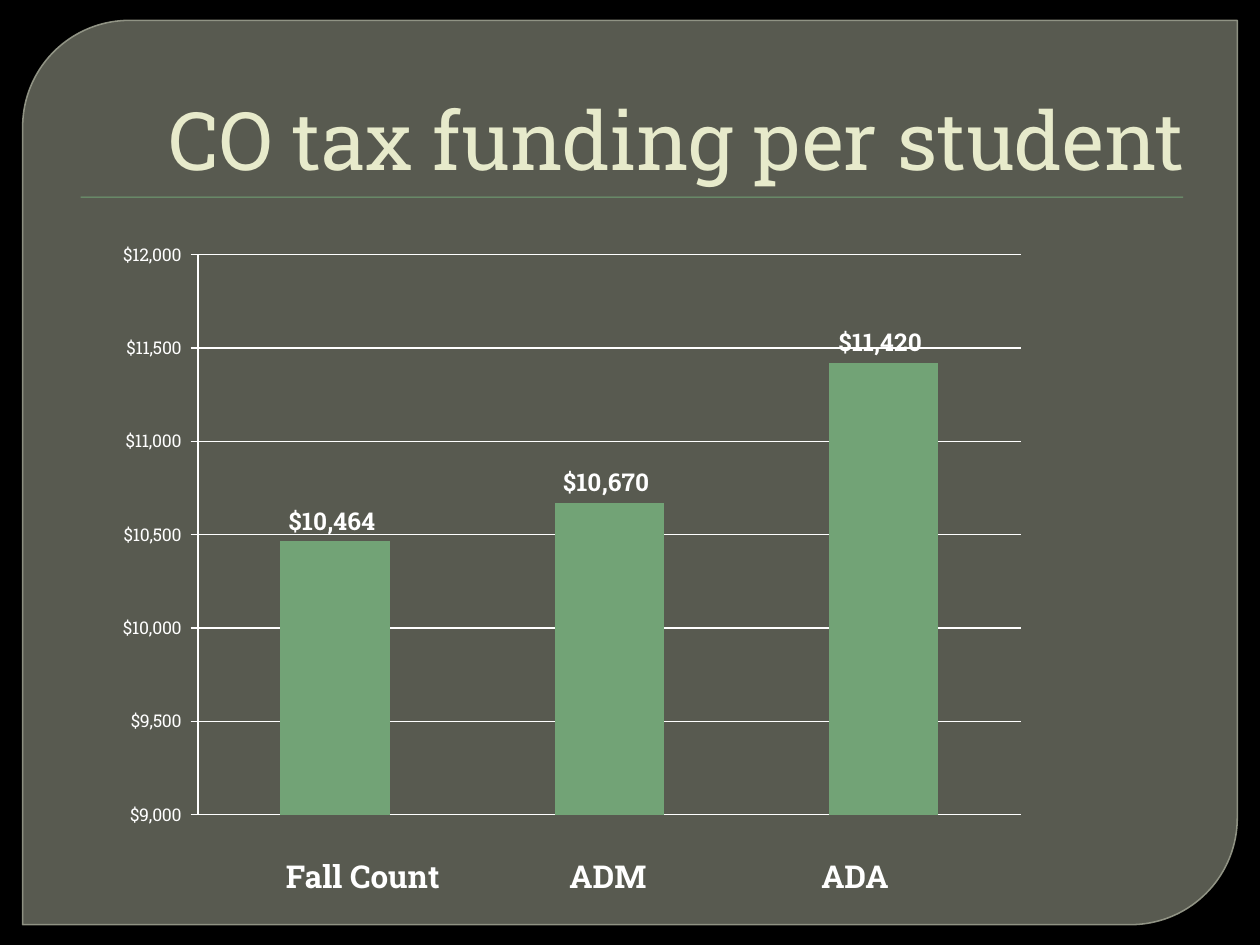
import collections

import pptx
import pptx.chart.data
import pptx.dml.color
import pptx.enum.chart
import pptx.enum.shapes
import pptx.enum.text
import pptx.oxml
import pptx.oxml.ns
import pptx.util

RGBColor = pptx.dml.color.RGBColor
BLACK = RGBColor(0x00, 0x00, 0x00)
WHITE = RGBColor(0xFF, 0xFF, 0xFF)
OLIVE = RGBColor(0x88, 0x8B, 0x7B)
EDGE = RGBColor(0x9D, 0xA0, 0x90)
GREEN = RGBColor(0x72, 0xA3, 0x76)
CREAM = RGBColor(0xE7, 0xEA, 0xCB)
FONT = "Roboto Slab"
DOLLARS = '"$"#,##0_);\\("$"#,##0\\)'
FUNDING = {"1": 10464, "2": 10670, "3": 11420}
Box = collections.namedtuple("Box", "left top width height")


def share(box, left, top, width, height):
    """Return the part of a box given by shares of its size."""
    return Box(
        round(box.left + left * box.width),
        round(box.top + top * box.height),
        round(width * box.width),
        round(height * box.height),
    )


def style_font(font, size, color, bold=False):
    """Set the typeface, size, colour and weight of a font."""
    font.name = FONT
    font.size = pptx.util.Pt(size)
    font.color.rgb = color
    font.bold = bold


def set_opacity(color_format, percent):
    """Make a solid fill partly see-through."""
    solid = color_format._xPr.find(pptx.oxml.ns.qn("a:solidFill"))
    solid[0].append(pptx.oxml.parse_xml(
        f'<a:alpha {pptx.oxml.ns.nsdecls("a")} val="{percent * 1000}"/>'))


def add_panel(slide, box):
    """Draw the panel with two rounded corners and the rule below the title."""
    shapes = pptx.enum.shapes.MSO_SHAPE
    panel = slide.shapes.add_shape(
        shapes.ROUND_2_DIAG_RECTANGLE, *share(box, 0.018, 0.0215, 0.964, 0.957))
    panel.adjustments[0] = 0.118
    panel.adjustments[1] = 0
    panel.shadow.inherit = False
    panel.fill.solid()
    panel.fill.fore_color.rgb = OLIVE
    set_opacity(panel.fill, 65)
    panel.line.width = pptx.util.Pt(0.87)
    panel.line.color.rgb = EDGE
    set_opacity(panel.line.fill, 88)

    rule = slide.shapes.add_shape(
        shapes.RECTANGLE, *share(box, 0.064, 0.208, 0.875, 0.0013))
    rule.shadow.inherit = False
    rule.fill.solid()
    rule.fill.fore_color.rgb = GREEN
    rule.line.fill.background()


def add_text(slide, box, text, size, color, bold=False):
    """Place one line of text and return its frame."""
    frame = slide.shapes.add_textbox(*box).text_frame
    frame.word_wrap = True
    frame.text = text
    style_font(frame.paragraphs[0].runs[0].font, size, color, bold)
    return frame


def add_title(slide, box):
    """Place the title at the lower right of its box."""
    title = add_text(slide, box, "CO tax funding per student", 46, CREAM)
    title.vertical_anchor = pptx.enum.text.MSO_ANCHOR.BOTTOM
    title.paragraphs[0].alignment = pptx.enum.text.PP_ALIGN.RIGHT


def fix_plot_area(chart, **shares):
    """Pin the inner plot area to shares of the chart's size."""
    plot_area = chart._chartSpace.chart.plotArea
    for layout in plot_area.findall(pptx.oxml.ns.qn("c:layout")):
        plot_area.remove(layout)
    lengths = "".join(f'<c:{key} val="{val}"/>' for key, val in shares.items())
    plot_area.insert(0, pptx.oxml.parse_xml(
        f'<c:layout {pptx.oxml.ns.nsdecls("c")}><c:manualLayout>'
        '<c:layoutTarget val="inner"/><c:xMode val="edge"/><c:yMode val="edge"/>'
        f'{lengths}</c:manualLayout></c:layout>'))


def add_funding_chart(slide, box):
    """Draw the column chart of funding per student."""
    data = pptx.chart.data.CategoryChartData(number_format=DOLLARS)
    data.categories = list(FUNDING)
    data.add_series("Series 1", list(FUNDING.values()))
    chart = slide.shapes.add_chart(
        pptx.enum.chart.XL_CHART_TYPE.COLUMN_CLUSTERED, *box, data).chart
    style_font(chart.font, 10, WHITE)
    chart.has_legend = False
    chart.has_title = False
    chart.category_axis.visible = False
    fix_plot_area(chart, x=0.1, y=0.04, w=0.88, h=0.92)

    dollars = chart.value_axis
    dollars.minimum_scale = 9000
    dollars.maximum_scale = 12000
    dollars.major_unit = 500
    dollars.major_tick_mark = pptx.enum.chart.XL_TICK_MARK.CROSS
    dollars.tick_labels.number_format = DOLLARS
    dollars.tick_labels.number_format_is_linked = False
    dollars.has_major_gridlines = True
    for line in (dollars.format.line, dollars.major_gridlines.format.line):
        line.color.rgb = WHITE
        line.width = pptx.util.Pt(0.75)

    columns = chart.plots[0]
    columns.gap_width = 150
    columns.vary_by_categories = False
    funding = columns.series[0]
    funding.format.fill.solid()
    funding.format.fill.fore_color.rgb = GREEN
    amounts = funding.data_labels
    amounts.show_value = True
    amounts.number_format = DOLLARS
    amounts.number_format_is_linked = False
    amounts.position = pptx.enum.chart.XL_LABEL_POSITION.OUTSIDE_END
    style_font(amounts.font, 14, WHITE, True)


def add_count_names(slide, box):
    """Name the counting methods below their columns."""
    names = (("Fall Count", 0.217, 0.167), ("ADM", 0.442, 0.092), ("ADA", 0.642, 0.083))
    for name, left, width in names:
        add_text(slide, share(box, left, 0, width, 1), name, 18, WHITE, True)


def main():
    """Build the slide and save it."""
    deck = pptx.Presentation()
    deck.slide_width = pptx.util.Inches(10)
    deck.slide_height = pptx.util.Inches(7.5)
    page = Box(0, 0, deck.slide_width, deck.slide_height)
    slide = deck.slides.add_slide(deck.slide_layouts[6])
    slide.background.fill.solid()
    slide.background.fill.fore_color.rgb = BLACK
    add_panel(slide, page)
    add_title(slide, share(page, 0.05, 0.037, 0.9, 0.167))
    add_funding_chart(slide, share(page, 0.083, 0.244, 0.742, 0.644))
    add_count_names(slide, share(page, 0, 0.9, 1, 0.053))
    deck.save("out.pptx")


if __name__ == "__main__":
    main()
